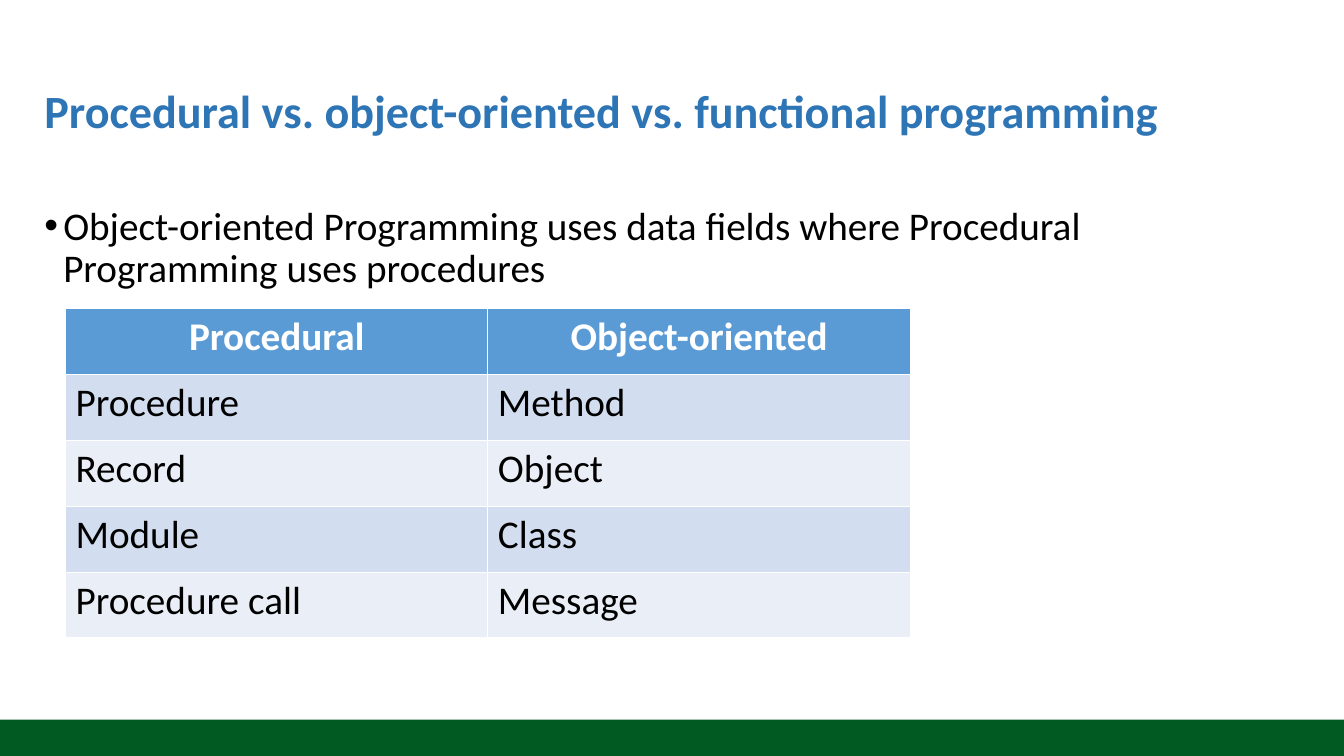
from pptx import Presentation
from pptx.dml.color import RGBColor
from pptx.enum import shapes, text
from pptx.oxml import parse_xml
from pptx.oxml.ns import nsdecls
from pptx.util import Pt

WIDTH, HEIGHT = 960, 540
BAND_HEIGHT = 26
LEFT, TEXT_WIDTH = 24.5, 913
COMPARISON = [
    ("Procedural", "Object-oriented"),
    ("Procedure", "Method"),
    ("Record", "Object"),
    ("Module", "Class"),
    ("Procedure call", "Message"),
]


def colour(code):
    """Turn a hex string into a colour."""
    return RGBColor.from_string(code)


def style(paragraph, size, code, bold=False, align=text.PP_ALIGN.LEFT):
    """Set the font and alignment of a paragraph."""
    paragraph.alignment = align
    font = paragraph.font
    font.name, font.size, font.bold = "Calibri", Pt(size), bold
    font.color.rgb = colour(code)


def fill_placeholder(holder, words, top, height, anchor):
    """Place a template placeholder and return its only paragraph."""
    holder.left, holder.top = Pt(LEFT), Pt(top)
    holder.width, holder.height = Pt(TEXT_WIDTH), Pt(height)
    frame = holder.text_frame
    frame.text = words
    frame.word_wrap = True
    frame.auto_size = text.MSO_AUTO_SIZE.NONE
    frame.vertical_anchor = anchor
    paragraph = frame.paragraphs[0]
    paragraph.line_spacing = 0.9
    paragraph.space_before = Pt(0)
    return paragraph


def add_bullet(paragraph, indent):
    """Give a paragraph a round bullet with a hanging indent."""
    properties = paragraph._p.get_or_add_pPr()
    properties.set("marL", str(Pt(indent)))
    properties.set("indent", str(-Pt(indent)))
    properties.append(parse_xml(f'<a:buFont {nsdecls("a")} typeface="Arial"/>'))
    properties.append(parse_xml(f'<a:buChar {nsdecls("a")} char="•"/>'))


def add_footer_band(slide):
    """Draw the green band along the bottom edge."""
    band = slide.shapes.add_shape(
        shapes.MSO_SHAPE.RECTANGLE,
        Pt(0), Pt(HEIGHT - BAND_HEIGHT), Pt(WIDTH), Pt(BAND_HEIGHT))
    band.shadow.inherit = False
    band.fill.solid()
    band.fill.fore_color.rgb = colour("015A22")
    band.line.fill.background()


def add_comparison(slide, rows, left, top, column_width, row_height):
    """Add the table of matching terms."""
    columns = len(rows[0])
    table = slide.shapes.add_table(
        len(rows), columns, Pt(left), Pt(top),
        Pt(column_width * columns), Pt(row_height * len(rows))).table
    for row, terms in enumerate(rows):
        header = row == 0
        shade = "5B9BD5" if header else ("EAEFF7", "D2DEEF")[row % 2]
        for column, term in enumerate(terms):
            cell = table.cell(row, column)
            cell.text = term
            cell.fill.solid()
            cell.fill.fore_color.rgb = colour(shade)
            style(cell.text_frame.paragraphs[0], 28,
                  "FFFFFF" if header else "000000", header,
                  text.PP_ALIGN.CENTER if header else text.PP_ALIGN.LEFT)


def main():
    """Build and save the slide."""
    deck = Presentation()
    deck.slide_width, deck.slide_height = Pt(WIDTH), Pt(HEIGHT)
    slide = deck.slides.add_slide(deck.slide_layouts[1])
    add_footer_band(slide)
    title = fill_placeholder(
        slide.shapes.title,
        "Procedural vs. object-oriented vs. functional programming",
        28.8, 104.4, text.MSO_ANCHOR.MIDDLE)
    style(title, 33, "2E75B6", bold=True)
    statement = fill_placeholder(
        slide.placeholders[1],
        "Object-oriented Programming uses data fields where "
        "Procedural Programming uses procedures",
        144, 388.8, text.MSO_ANCHOR.TOP)
    add_bullet(statement, 13.5)
    style(statement, 28, "000000")
    add_comparison(slide, COMPARISON, 46.8, 220.3, 301.7, 47.1)
    deck.save("out.pptx")


if __name__ == "__main__":
    main()
